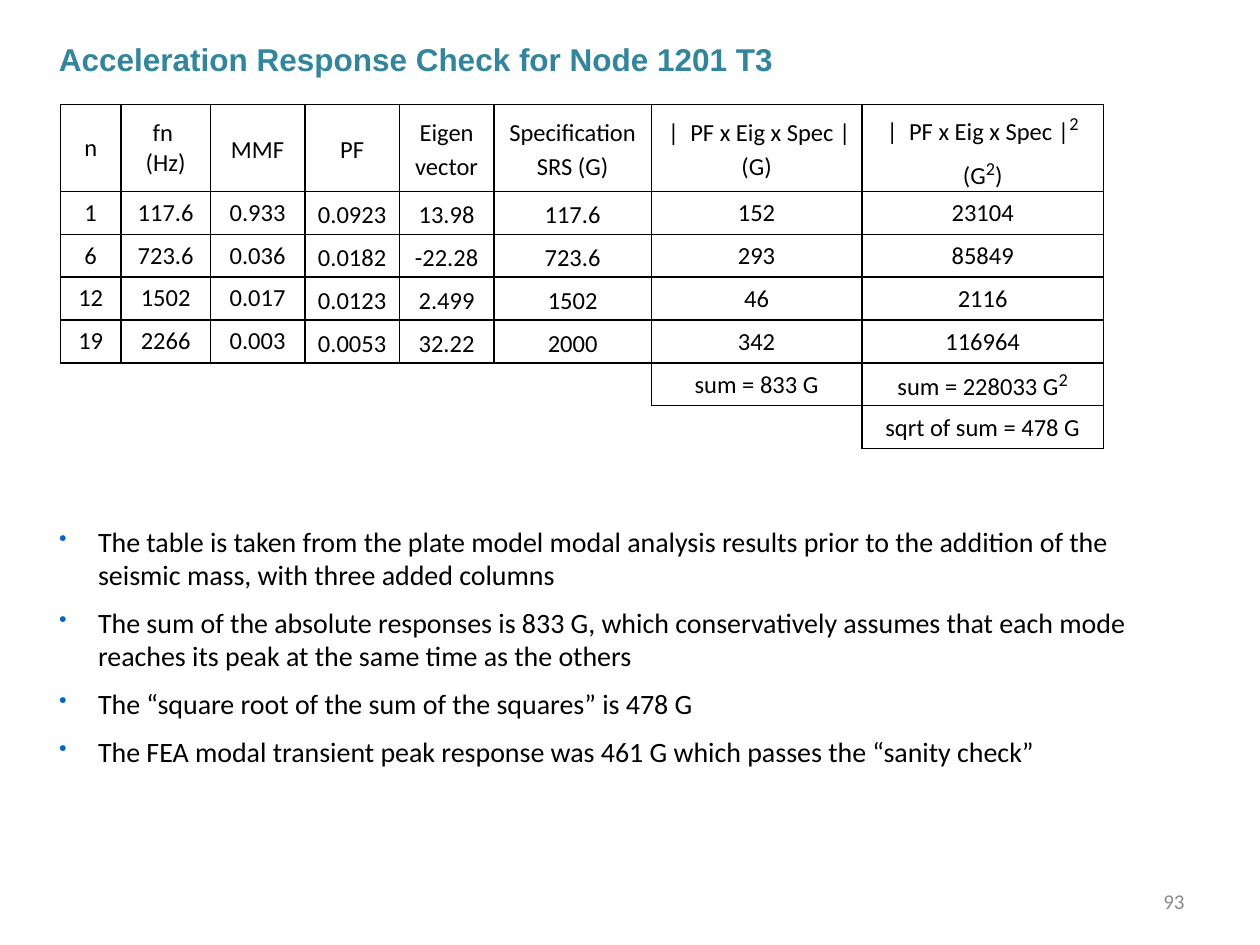
from lxml import etree
from pptx import Presentation
from pptx.dml.color import RGBColor
from pptx.enum import text
from pptx.oxml import ns
from pptx.util import Inches, Pt


def style(run, size, color="000000", name="Calibri", bold=False):
    run.font.size = Pt(size)
    run.font.name = name
    run.font.bold = bold
    run.font.color.rgb = RGBColor.from_string(color)


def add_box(left, top, width, height):
    frame = slide.shapes.add_textbox(*map(Inches, (left, top, width, height))).text_frame
    frame.word_wrap = True
    return frame


prs = Presentation()
prs.slide_width, prs.slide_height = Inches(10), Inches(7.5)
slide = prs.slides.add_slide(prs.slide_layouts[6])

page_number = add_box(7.17, 6.95, 2.33, 0.4)
page_number.vertical_anchor = text.MSO_ANCHOR.MIDDLE
page_number.paragraphs[0].alignment = text.PP_ALIGN.RIGHT
run = page_number.paragraphs[0].add_run()
run.text = "93"
style(run, 12, "8C8C8C")

column_widths = [0.48, 0.71, 0.75, 0.75, 0.75, 1.25, 1.67, 1.92]
row_heights = [0.69] + [0.34] * 6
modes = [
    ["n", "fn \n(Hz)", "MMF", "PF", "Eigen\nvector", "Specification\nSRS (G)",
     " |  PF x Eig x Spec |\n(G)", "|  PF x Eig x Spec |^2^\n(G^2^)"],
    ["1", "117.6", "0.933", "0.0923", "13.98", "117.6", "152", "23104"],
    ["6", "723.6", "0.036", "0.0182", "-22.28", "723.6", "293", "85849"],
    ["12", "1502", "0.017", "0.0123", "2.499", "1502", "46", "2116"],
    ["19", "2266", "0.003", "0.0053", "32.22", "2000", "342", "116964"],
    [""] * 6 + ["sum = 833 G", "sum = 228033 G^2^"],
    [""] * 7 + ["sqrt of sum = 478 G"],
]
filled = {(r, c) for r, row in enumerate(modes) for c, value in enumerate(row) if value}
sides = {"lnL": (0, -1), "lnR": (0, 1), "lnT": (-1, 0), "lnB": (1, 0)}

response = slide.shapes.add_table(
    len(modes), len(column_widths), Inches(0.48), Inches(0.83),
    Inches(sum(column_widths)), Inches(sum(row_heights))).table
response.first_row = response.horz_banding = False
for column, width in zip(response.columns, column_widths):
    column.width = Inches(width)
for row, height in zip(response.rows, row_heights):
    row.height = Inches(height)

for r, row in enumerate(modes):
    for c, value in enumerate(row):
        cell = response.cell(r, c)
        result = r > 0 and c > 5
        spaced = (r == 0 and c > 1) or (r > 0 and 3 <= c <= 5)
        cell.vertical_anchor = text.MSO_ANCHOR.MIDDLE
        cell.margin_left = cell.margin_right = Inches(0.01 if result else 0.07)
        cell.margin_top = Inches(0.01 if result else 0)
        cell.margin_bottom = 0
        properties = cell._tc.get_or_add_tcPr()
        for side, (down, across) in sides.items():
            line = etree.SubElement(properties, ns.qn("a:" + side), w=str(Pt(1)))
            if (r, c) in filled or (r + down, c + across) in filled:
                ink = etree.SubElement(line, ns.qn("a:solidFill"))
                etree.SubElement(ink, ns.qn("a:srgbClr"), val="000000")
            else:
                etree.SubElement(line, ns.qn("a:noFill"))
        cell.fill.background()
        for i, words in enumerate(value.split("\n")):
            frame = cell.text_frame
            paragraph = frame.add_paragraph() if i else frame.paragraphs[0]
            paragraph.alignment = text.PP_ALIGN.CENTER
            paragraph.font.size = Pt(14)
            if spaced:
                paragraph.line_spacing = 1.15
            for part, piece in enumerate(words.split("^")):
                if piece:
                    raised = part % 2 == 1
                    run = paragraph.add_run()
                    run.text = piece
                    style(run, 18 if raised else 14)
                    if raised:
                        run._r.get_or_add_rPr().set("baseline", "30000")

findings = [
    "The table is taken from the plate model modal analysis results prior to the addition "
    "of the seismic mass, with three added columns",
    "The sum of the absolute responses is 833 G, which conservatively assumes that each "
    "mode reaches its peak at the same time as the others",
    "The “square root of the sum of the squares” is 478 G",
    "The FEA modal transient peak response was 461 G which passes the “sanity check”",
]
conclusions = add_box(0.37, 4.11, 9.09, 2.05)
for i, finding in enumerate(findings):
    paragraph = conclusions.add_paragraph() if i else conclusions.paragraphs[0]
    paragraph.space_before, paragraph.space_after = Pt(6), Pt(2)
    properties = paragraph._p.get_or_add_pPr()
    properties.set("marL", str(Inches(0.31)))
    properties.set("indent", str(Inches(-0.31)))
    bullet_color = etree.SubElement(properties, ns.qn("a:buClr"))
    etree.SubElement(bullet_color, ns.qn("a:srgbClr"), val="0066CC")
    etree.SubElement(properties, ns.qn("a:buSzPct"), val="80000")
    etree.SubElement(properties, ns.qn("a:buChar"), char="•")
    run = paragraph.add_run()
    run.text = finding
    style(run, 16)

title = add_box(0.37, 0.27, 8.54, 0.4).paragraphs[0]
title.space_before = title.space_after = Pt(2)
run = title.add_run()
run.text = "Acceleration Response Check for Node 1201 T3"
style(run, 18, "31859C", "Arial", True)

prs.save("out.pptx")
